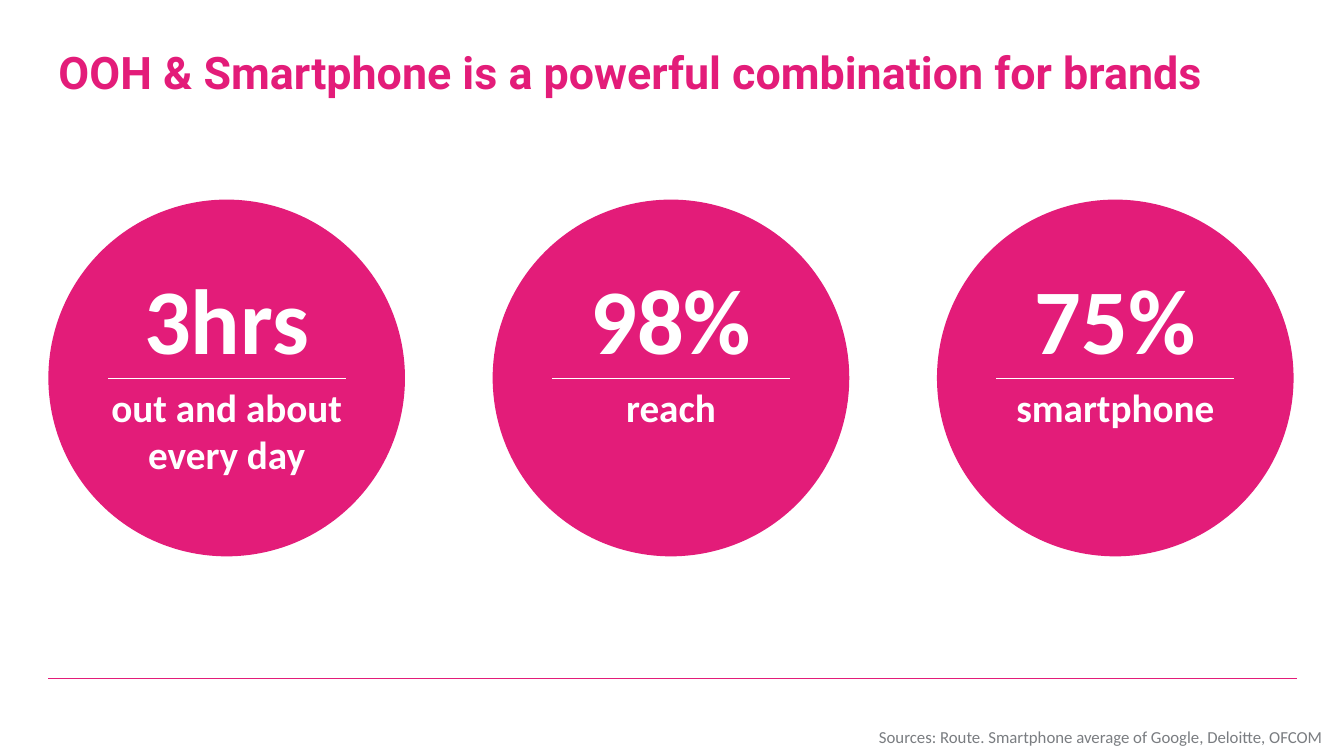
from dataclasses import dataclass

import pptx
import pptx.dml.color
import pptx.enum.shapes
import pptx.enum.text
import pptx.oxml.ns
import pptx.presentation
import pptx.shapes.autoshape
import pptx.slide
import pptx.util
from lxml import etree
from pptx.util import Cm

COLORS = {"pink": "E31C79", "white": "FFFFFF", "grey": "7A7D81"}
ALIGN = pptx.enum.text.PP_ALIGN
ANCHOR = pptx.enum.text.MSO_ANCHOR

MARGIN = 1.22
CONTENT_W = 31.47
CIRCLE_TOP = 5.03
DIAMETER = 8.99
PITCH = 11.2
MIDDLE = 9.53
VALUE_H = 3.07
VALUE_INSET = 1.09
RULE_INSET = 1.5


@dataclass
class Stat:
    value: str
    caption: list[str]


STATS = [
    Stat("3hrs", ["out and about", "every day"]),
    Stat("98%", ["reach"]),
    Stat("75%", ["smartphone"]),
]


def rgb(name: str) -> pptx.dml.color.RGBColor:
    return pptx.dml.color.RGBColor.from_string(COLORS[name])


def set_font(p, size: float, color: str, bold: bool, name: str = "Calibri") -> None:
    p.font.name = name
    p.font.size = pptx.util.Pt(size)
    p.font.bold = bold
    p.font.color.rgb = rgb(color)


def add_text(s: pptx.slide.Slide, x: float, y: float, w: float, h: float,
             lines: list[str], size: float, color: str = "white", bold: bool = True,
             align: ALIGN = ALIGN.CENTER, anchor: ANCHOR = ANCHOR.TOP) -> pptx.shapes.autoshape.Shape:
    sp = s.shapes.add_textbox(Cm(x), Cm(y), Cm(w), Cm(h))
    tf = sp.text_frame
    tf.word_wrap = True
    tf.vertical_anchor = anchor
    tf.text = "\n".join(lines)
    for p in tf.paragraphs:
        p.alignment = align
        set_font(p, size, color, bold)
    return sp


def add_rule(s: pptx.slide.Slide, x: float, y: float, w: float, color: str) -> None:
    line = s.shapes.add_connector(pptx.enum.shapes.MSO_CONNECTOR.STRAIGHT,
                                  Cm(x), Cm(y), Cm(x + w), Cm(y))
    line.line.color.rgb = rgb(color)
    line.line.width = pptx.util.Pt(1)
    etree.SubElement(line._element.spPr, pptx.oxml.ns.qn("a:effectLst"))


def add_stat(s: pptx.slide.Slide, stat: Stat, x: float) -> None:
    """Draw a circle with its value above and its caption below the middle rule."""
    circle = s.shapes.add_shape(pptx.enum.shapes.MSO_SHAPE.OVAL,
                                Cm(x), Cm(CIRCLE_TOP), Cm(DIAMETER), Cm(DIAMETER))
    circle.shadow.inherit = False
    circle.fill.solid()
    circle.fill.fore_color.rgb = rgb("pink")
    circle.line.fill.background()
    add_text(s, x + VALUE_INSET, MIDDLE - VALUE_H, DIAMETER - 2 * VALUE_INSET, VALUE_H,
             [stat.value], 66, anchor=ANCHOR.BOTTOM)
    add_text(s, x, MIDDLE, DIAMETER, 0.25 + 1.2 * len(stat.caption), stat.caption, 28)
    add_rule(s, x + RULE_INSET, MIDDLE, DIAMETER - 2 * RULE_INSET, "white")


def add_title(s: pptx.slide.Slide, text: str) -> None:
    title = s.shapes.title
    title.left, title.top = Cm(MARGIN), Cm(1.14)
    title.width, title.height = Cm(CONTENT_W), Cm(3.02)
    tf = title.text_frame
    tf.text = text
    tf.word_wrap = True
    tf.auto_size = pptx.enum.text.MSO_AUTO_SIZE.NONE
    tf.vertical_anchor = ANCHOR.TOP
    p = tf.paragraphs[0]
    p.alignment = ALIGN.LEFT
    p.line_spacing = 0.9
    set_font(p, 32, "pink", True, "Roboto")


def add_sources(s: pptx.slide.Slide, text: str) -> None:
    sp = add_text(s, 19.63, 18.31, 13.72, 0.51, [text], 12, "grey", False,
                  ALIGN.RIGHT, ANCHOR.BOTTOM)
    tf = sp.text_frame
    tf.word_wrap = False
    tf.margin_left = tf.margin_top = tf.margin_right = tf.margin_bottom = 0


def build() -> pptx.presentation.Presentation:
    prs = pptx.Presentation()
    prs.slide_width, prs.slide_height = Cm(33.88), Cm(19.05)
    s = prs.slides.add_slide(prs.slide_layouts.get_by_name("Title Only"))
    add_rule(s, MARGIN, 17.09, CONTENT_W, "pink")
    add_title(s, "OOH & Smartphone is a powerful combination for brands")
    for i, stat in enumerate(STATS):
        add_stat(s, stat, MARGIN + i * PITCH)
    add_sources(s, "Sources: Route. Smartphone average of Google, Deloitte, OFCOM")
    return prs


if __name__ == "__main__":
    build().save("out.pptx")
